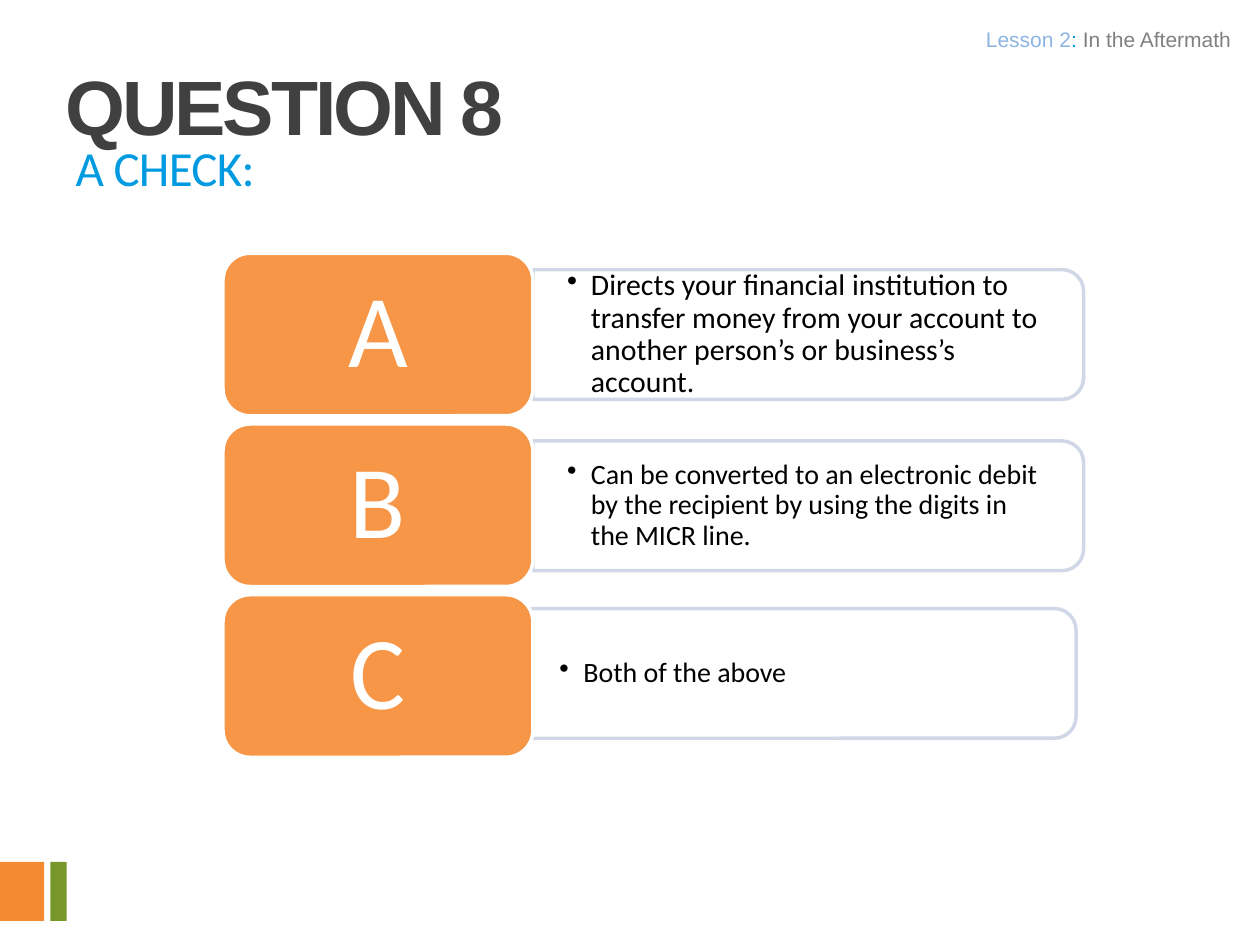
from lxml.etree import SubElement
from pptx import Presentation
from pptx.dml.color import RGBColor
from pptx.enum.shapes import MSO_SHAPE
from pptx.enum.text import MSO_ANCHOR, MSO_AUTO_SIZE, PP_ALIGN
from pptx.oxml.ns import qn
from pptx.util import Inches, Pt

WHITE = RGBColor(0xFF, 0xFF, 0xFF)
BLACK = RGBColor(0x00, 0x00, 0x00)
ORANGE = RGBColor(0xF7, 0x96, 0x46)
PANEL_LINE = RGBColor(0xD0, 0xD8, 0xE8)
ACCENT_ORANGE = RGBColor(0xF3, 0x8A, 0x31)
ACCENT_GREEN = RGBColor(0x77, 0x97, 0x2B)
SKY = RGBColor(0x00, 0x9A, 0xE1)
PALE_BLUE = RGBColor(0x8E, 0xB4, 0xE3)
GRAY = RGBColor(0x80, 0x80, 0x80)
DARK = RGBColor(0x40, 0x40, 0x40)

TITLE = "QUESTION 8"
PROMPT = "A CHECK:"
LESSON = [("Lesson 2", PALE_BLUE), (": ", SKY), ("In the Aftermath", GRAY)]
ANSWERS = [
    ("A", "Directs your financial institution to transfer money from your account "
          "to another person’s or business’s account.", 17, 4.23, 2.14),
    ("B", "Can be converted to an electronic debit by the recipient by using "
          "the digits in the MICR line.", 16, 4.23, 3.5),
    ("C", "Both of the above", 16, 4.17, 4.83),
]
ACCENTS = [(0, 0.35, ACCENT_ORANGE), (0.4, 0.13, ACCENT_GREEN)]

CARD_LEFT, CARD_TOP, CARD_WIDTH, CARD_HEIGHT = 1.77, 2.01, 2.46, 1.29
CARD_PITCH = 1.355
PANEL_LENGTH, PANEL_HEIGHT = 4.37, 1.03
TEXT_WIDTH = 4.32


def style_run(run, name, size, color, bold=False, spacing=None):
    run.font.name = name
    run.font.size = Pt(size)
    run.font.bold = bold
    run.font.color.rgb = color
    if spacing is not None:
        run.font._element.set("spc", str(spacing))


def set_margins(text_frame, horizontal, vertical):
    text_frame.margin_left = text_frame.margin_right = Inches(horizontal)
    text_frame.margin_top = text_frame.margin_bottom = Inches(vertical)


def set_bullet(paragraph, character=None, indent=0):
    properties = paragraph._p.get_or_add_pPr()
    properties.set("marL", str(Inches(indent)))
    properties.set("indent", str(-Inches(indent)))
    if character:
        SubElement(properties, qn("a:buChar")).set("char", character)
    else:
        SubElement(properties, qn("a:buNone"))


def add_box(slide, kind, left, top, width, height, fill, line=None):
    shape = slide.shapes.add_shape(
        kind, Inches(left), Inches(top), Inches(width), Inches(height))
    shape.shadow.inherit = False
    shape.fill.solid()
    shape.fill.fore_color.rgb = fill
    if line is None:
        shape.line.fill.background()
    else:
        shape.line.color.rgb = line
        shape.line.width = Pt(2)
    return shape


def add_text_box(slide, left, top, width, height):
    box = slide.shapes.add_textbox(
        Inches(left), Inches(top), Inches(width), Inches(height))
    box.text_frame.word_wrap = True
    return box.text_frame


def fill_placeholder(shape, text, left, top, width, height, line_spacing):
    shape.left, shape.top = Inches(left), Inches(top)
    shape.width, shape.height = Inches(width), Inches(height)
    text_frame = shape.text_frame
    text_frame.text = text
    text_frame.auto_size = MSO_AUTO_SIZE.NONE
    text_frame.vertical_anchor = MSO_ANCHOR.TOP
    paragraph = text_frame.paragraphs[0]
    set_bullet(paragraph)
    paragraph.alignment = PP_ALIGN.LEFT
    paragraph.line_spacing = Pt(line_spacing)
    paragraph.space_before = Pt(0)
    return paragraph.runs[0]


def add_answer(slide, card_top, letter, answer, size, panel_left, panel_top):
    panel = add_box(slide, MSO_SHAPE.ROUND_2_SAME_RECTANGLE,
                    panel_left + (PANEL_LENGTH - PANEL_HEIGHT) / 2,
                    panel_top - (PANEL_LENGTH - PANEL_HEIGHT) / 2,
                    PANEL_HEIGHT, PANEL_LENGTH, WHITE, PANEL_LINE)
    panel.rotation = 90

    text_frame = add_text_box(slide, panel_left, panel_top + 0.05, TEXT_WIDTH, 0.93)
    set_margins(text_frame, 0.27, 0.14)
    text_frame.vertical_anchor = MSO_ANCHOR.MIDDLE
    text_frame.text = answer
    paragraph = text_frame.paragraphs[0]
    set_bullet(paragraph, "•", 0.19)
    paragraph.line_spacing = 0.9
    style_run(paragraph.runs[0], "Calibri", size, BLACK)

    card = add_box(slide, MSO_SHAPE.ROUNDED_RECTANGLE, CARD_LEFT, card_top,
                   CARD_WIDTH, CARD_HEIGHT, ORANGE, WHITE)
    set_margins(card.text_frame, 0.25, 0.12)
    card.text_frame.vertical_anchor = MSO_ANCHOR.MIDDLE
    card.text_frame.text = letter
    paragraph = card.text_frame.paragraphs[0]
    paragraph.alignment = PP_ALIGN.CENTER
    paragraph.line_spacing = 0.9
    style_run(paragraph.runs[0], "Calibri", 59, WHITE)


def main():
    presentation = Presentation()
    presentation.slide_width, presentation.slide_height = Inches(10), Inches(7.5)
    slide = presentation.slides.add_slide(presentation.slide_layouts[1])

    for left, width, color in ACCENTS:
        add_box(slide, MSO_SHAPE.RECTANGLE, left, 6.84, width, 0.47, color)

    title_run = fill_placeholder(slide.shapes.title, TITLE, 0.42, 0.33, 8.66, 0.83, 59)
    style_run(title_run, "Arial", 44, DARK, True, -180)
    prompt_run = fill_placeholder(slide.placeholders[1], PROMPT, 0.5, 1.33, 9.5, 1, 13)
    style_run(prompt_run, "Calibri", 28, SKY, spacing=-40)

    for row, answer in enumerate(ANSWERS):
        add_answer(slide, CARD_TOP + row * CARD_PITCH, *answer)

    text_frame = add_text_box(slide, 4, 0.17, 5.85, 0.32)
    set_margins(text_frame, 0.08, 0.04)
    paragraph = text_frame.paragraphs[0]
    paragraph.alignment = PP_ALIGN.RIGHT
    for text, color in LESSON:
        run = paragraph.add_run()
        run.text = text
        style_run(run, "Arial", 12, color)

    presentation.save("out.pptx")


if __name__ == "__main__":
    main()
